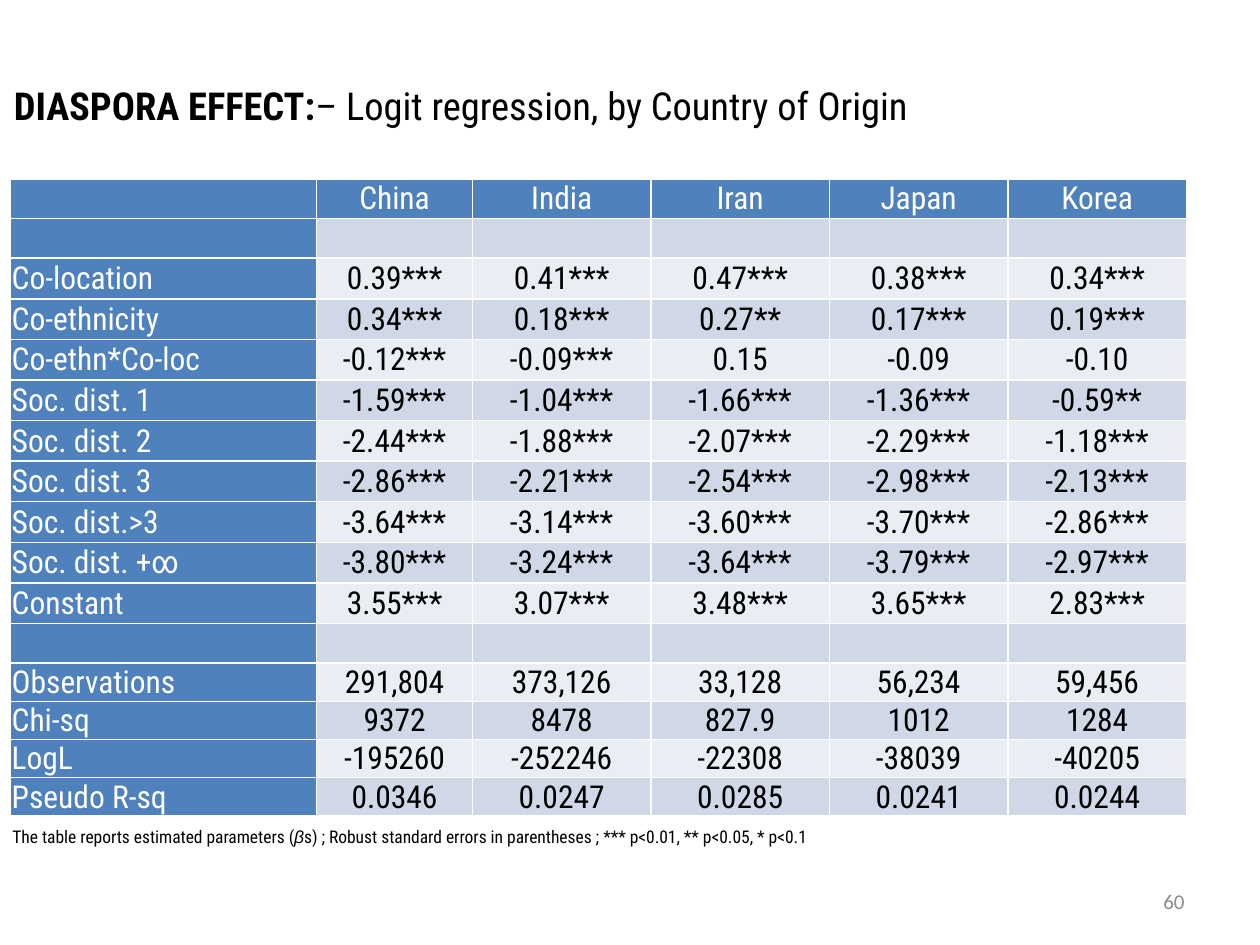
from pptx import Presentation
from pptx.util import Pt
from pptx.dml.color import RGBColor
from pptx.enum.text import PP_ALIGN, MSO_ANCHOR

FACE = "Roboto Condensed"
ROWS = """|China|India|Iran|Japan|Korea
|||||
Co-location|0.39***|0.41***|0.47***|0.38***|0.34***
Co-ethnicity|0.34***|0.18***|0.27**|0.17***|0.19***
Co-ethn*Co-loc|-0.12***|-0.09***|0.15|-0.09|-0.10
Soc. dist. 1|-1.59***|-1.04***|-1.66***|-1.36***|-0.59**
Soc. dist. 2|-2.44***|-1.88***|-2.07***|-2.29***|-1.18***
Soc. dist. 3|-2.86***|-2.21***|-2.54***|-2.98***|-2.13***
Soc. dist.>3|-3.64***|-3.14***|-3.60***|-3.70***|-2.86***
Soc. dist. +∞|-3.80***|-3.24***|-3.64***|-3.79***|-2.97***
Constant|3.55***|3.07***|3.48***|3.65***|2.83***
|||||
Observations|291,804|373,126|33,128|56,234|59,456
Chi-sq|9372|8478|827.9|1012|1284
LogL|-195260|-252246|-22308|-38039|-40205
Pseudo R-sq|0.0346|0.0247|0.0285|0.0241|0.0244"""
rows = [line.split("|") for line in ROWS.splitlines()]
widths = [175, 89] + [102] * 4
heights = [21.2, 22.2] + [23.2] * 9 + [22] + [21.7] * 4


def paint(font, size, color, face=FACE, bold=False, italic=False):
    font.size = Pt(size)
    font.name = face
    font.bold = bold
    font.italic = italic
    font.color.rgb = RGBColor.from_string(color)


def place(shape, left, top, width, height):
    shape.left, shape.top = Pt(left), Pt(top)
    shape.width, shape.height = Pt(width), Pt(height)
    shape.text_frame.word_wrap = True
    return shape.text_frame


deck = Presentation()
deck.slide_width, deck.slide_height = Pt(720), Pt(540)
slide = deck.slides.add_slide(deck.slide_layouts[5])
shapes = slide.shapes

frame = place(shapes.title, 0.7, 43.2, 702, 33.8)
frame.vertical_anchor = MSO_ANCHOR.TOP
head = frame.paragraphs[0]
head.alignment = PP_ALIGN.JUSTIFY
for text, bold in (("DIASPORA EFFECT:", True),
                   ("– Logit regression, by Country of Origin", False)):
    run = head.add_run()
    run.text = text
    paint(run.font, 22, "000000", bold=bold)

grid = shapes.add_table(len(rows), len(widths), Pt(6), Pt(102.2),
                        Pt(sum(widths)), Pt(sum(heights))).table
grid.first_col = True
for col, width in zip(grid.columns, widths):
    col.width = Pt(width)
for row, height in zip(grid.rows, heights):
    row.height = Pt(height)
for r, row in enumerate(rows):
    for c, text in enumerate(row):
        cell = grid.cell(r, c)
        edge = r == 0 or c == 0
        band = "D0D8E8" if r % 2 else "E9EDF4"
        cell.fill.solid()
        cell.fill.fore_color.rgb = RGBColor.from_string("4F81BD" if edge else band)
        cell.margin_left = cell.margin_right = cell.margin_top = Pt(0.7)
        cell.margin_bottom = Pt(0)
        cell.vertical_anchor = MSO_ANCHOR.MIDDLE
        if text:
            cell.text_frame.text = text
            para = cell.text_frame.paragraphs[0]
            para.alignment = PP_ALIGN.CENTER if c else PP_ALIGN.LEFT
            paint(para.runs[0].font, 18, "FFFFFF" if edge else "000000")

note = place(shapes.add_textbox(0, 0, 0, 0), 0, 468.7, 588, 19.4).paragraphs[0]
for text, face in (
        ("The table reports estimated parameters (", FACE),
        ("β", "Arial"),
        ("s) ; Robust standard errors in parentheses ; *** p<0.01, ** p<0.05, * p<0.1", FACE)):
    run = note.add_run()
    run.text = text
    paint(run.font, 10, "000000", face, italic=face == "Arial")

frame = place(shapes.add_textbox(0, 0, 0, 0), 516, 500.5, 168, 28.8)
frame.vertical_anchor = MSO_ANCHOR.MIDDLE
frame.text = "60"
page = frame.paragraphs[0]
page.alignment = PP_ALIGN.RIGHT
paint(page.runs[0].font, 12, "8C8C8C", "Calibri")

deck.save("out.pptx")
